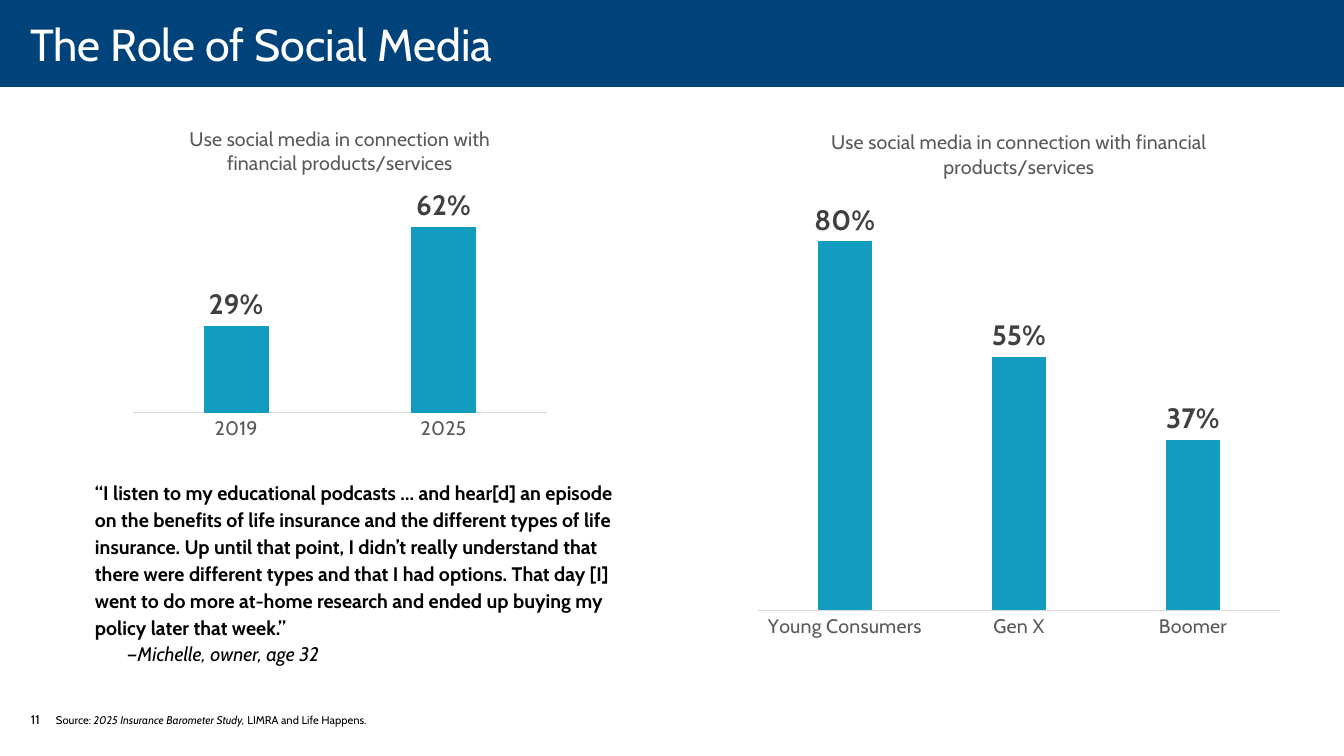
import pptx
import pptx.chart.data
import pptx.dml.color
import pptx.enum.chart
import pptx.enum.shapes
import pptx.enum.text
import pptx.oxml
import pptx.oxml.ns
import pptx.util

ANCHOR = pptx.enum.text.MSO_ANCHOR
CHART = pptx.enum.chart


def rgb(value):
    return pptx.dml.color.RGBColor.from_string(value)


class Deck:
    """Holds the style and the current slide, and draws each kind of element."""

    font = "Cabin"
    navy, teal, grey, dark, rule = "00437B", "129DC0", "595959", "404040", "D9D9D9"
    black, white = "000000", "FFFFFF"
    px_per_inch = 100.8

    def __init__(self):
        self.presentation = pptx.Presentation()
        self.presentation.slide_width = self.px(1344)
        self.presentation.slide_height = self.px(756)
        self.slide = self.presentation.slides.add_slide(self.presentation.slide_layouts[6])

    def px(self, length):
        return pptx.util.Emu(round(length * 914400 / self.px_per_inch))

    def style(self, font, size, color, bold=False, italic=False):
        font.name = self.font
        font.size = pptx.util.Pt(size)
        font.bold = bold
        font.italic = italic
        font.color.rgb = rgb(color)

    def band(self, box, color):
        band = self.slide.shapes.add_shape(
            pptx.enum.shapes.MSO_SHAPE.RECTANGLE, *map(self.px, box))
        band.shadow.inherit = False
        band.fill.solid()
        band.fill.fore_color.rgb = rgb(color)
        band.line.fill.background()

    def text(self, box, paragraphs, size, color=black, anchor=ANCHOR.TOP,
             spacing=None, insets=(10, 5, 10, 5), wrap=True):
        frame = self.slide.shapes.add_textbox(*map(self.px, box)).text_frame
        frame.word_wrap = wrap
        frame.vertical_anchor = anchor
        (frame.margin_left, frame.margin_top,
         frame.margin_right, frame.margin_bottom) = map(self.px, insets)
        for index, (indent, runs) in enumerate(paragraphs):
            paragraph = frame.add_paragraph() if index else frame.paragraphs[0]
            if spacing:
                paragraph.line_spacing = spacing
            if indent:
                properties = paragraph._p.get_or_add_pPr()
                properties.set("marL", str(self.px(indent)))
                properties.set("indent", "0")
            for wording, bold, italic in runs:
                run = paragraph.add_run()
                run.text = wording
                self.style(run.font, size, color, bold, italic)

    def columns(self, box, title, shares, top, plot):
        data = pptx.chart.data.CategoryChartData(number_format="0%")
        data.categories = list(shares)
        data.add_series("Series 1", list(shares.values()))
        chart = self.slide.shapes.add_chart(
            CHART.XL_CHART_TYPE.COLUMN_CLUSTERED, *map(self.px, box), data).chart
        self.style(chart.font, 10, self.black)
        chart.has_legend = False
        chart.has_title = True
        heading = chart.chart_title.text_frame.paragraphs[0].add_run()
        heading.text = title
        self.style(heading.font, 14, self.grey)
        chart.chart_title.include_in_layout = False

        categories = chart.category_axis
        categories.major_tick_mark = CHART.XL_TICK_MARK.NONE
        categories.has_major_gridlines = False
        categories.format.line.color.rgb = rgb(self.rule)
        categories.format.line.width = pptx.util.Pt(0.75)
        self.style(categories.tick_labels.font, 14, self.grey)
        values = chart.value_axis
        values.visible = False
        values.has_major_gridlines = False
        values.minimum_scale, values.maximum_scale = 0, top

        bars = chart.plots[0]
        bars.vary_by_categories = False
        bars.gap_width, bars.overlap = 219, -27
        bars.series[0].format.fill.solid()
        bars.series[0].format.fill.fore_color.rgb = rgb(self.teal)
        bars.has_data_labels = True
        labels = bars.data_labels
        labels.show_value = True
        labels.number_format, labels.number_format_is_linked = "0%", False
        labels.position = CHART.XL_LABEL_POSITION.OUTSIDE_END
        self.style(labels.font, 20, self.dark, bold=True)
        self.place_plot(chart, plot)

    def place_plot(self, chart, plot):
        area = chart._chartSpace.chart.plotArea
        for layout in area.findall(pptx.oxml.ns.qn("c:layout")):
            area.remove(layout)
        modes = '<c:layoutTarget val="inner"/><c:xMode val="edge"/><c:yMode val="edge"/>'
        sizes = "".join(f'<c:{key} val="{share}"/>' for key, share in zip("xywh", plot))
        area.insert(0, pptx.oxml.parse_xml(
            f'<c:layout {pptx.oxml.ns.nsdecls("c")}><c:manualLayout>'
            f"{modes}{sizes}</c:manualLayout></c:layout>"))


def main():
    deck = Deck()
    deck.band((0, 0, 1344, 87), deck.navy)
    deck.text((0, -5, 1344, 98), [(0, [("The Role of Social Media", False, False)])],
              32, deck.white, ANCHOR.MIDDLE, insets=(30, 0, 20, 0), wrap=False)

    question = "Use social media in connection with financial products/services"
    deck.columns((747, 109, 544, 539), question,
                 {"Young Consumers": 0.8, "Gen X": 0.55, "Boomer": 0.37},
                 0.9, (0.02, 0.16, 0.96, 0.77))
    deck.columns((117, 109, 446, 349), question, {"2019": 0.29, "2025": 0.62},
                 0.7, (0.035, 0.27, 0.93, 0.6))

    quote = (
        "“I listen to my educational podcasts … and hear[d] an episode on the benefits "
        "of life insurance and the different types of life insurance. Up until that "
        "point, I didn’t really understand that there were different types and that I "
        "had options. That day [I] went to do more at-home research and ended up buying "
        "my policy later that week.”")
    deck.text((85, 473, 544, 199),
              [(0, [(quote, True, False)]),
               (32, [("—Michelle, owner, age 32", False, True)])],
              14, spacing=1.14)

    deck.text((21, 707, 49, 40), [(0, [("11", False, False)])], 9)
    deck.text((46, 659, 590, 73),
              [(0, [("Source: ", False, False),
                    ("2025 Insurance Barometer Study, ", False, True),
                    ("LIMRA and Life Happens.", False, False)])],
              8, anchor=ANCHOR.BOTTOM)
    deck.presentation.save("out.pptx")


if __name__ == "__main__":
    main()
